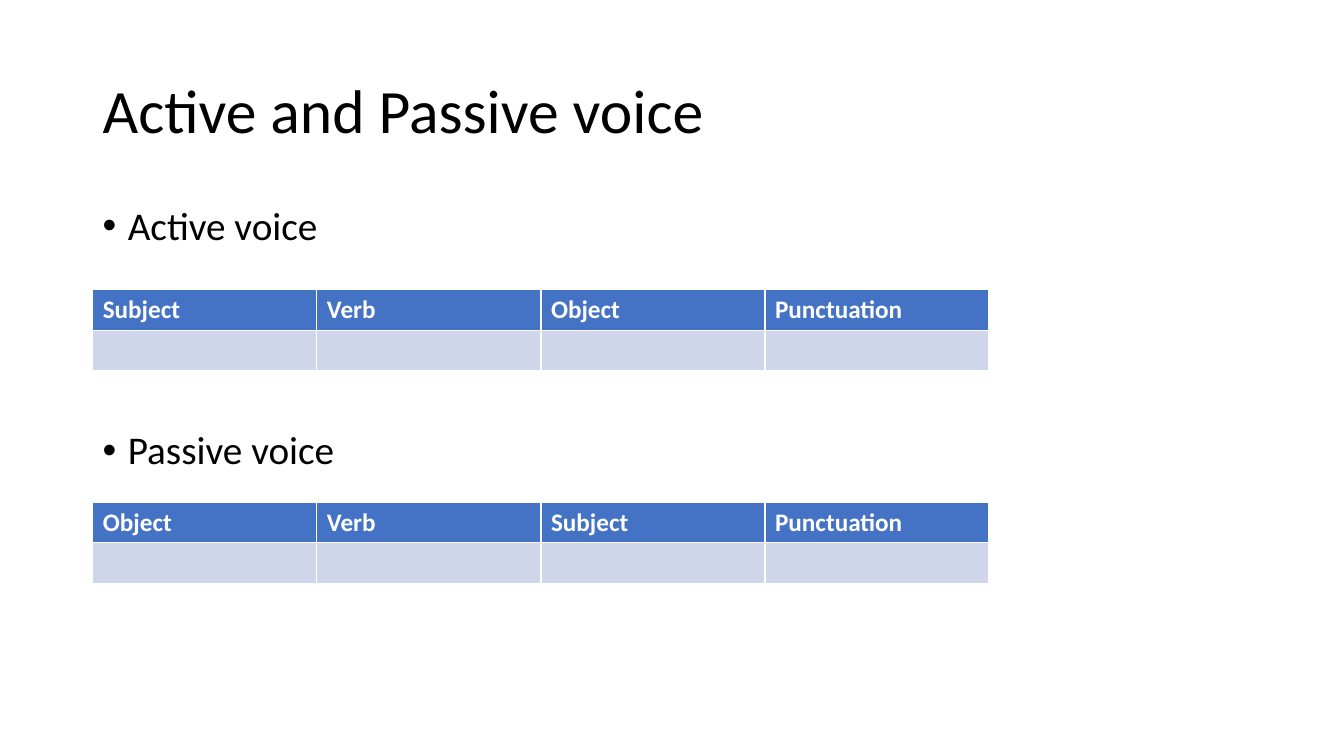
"""Build a slide on the word order of active and passive voice."""
import lxml.etree
import pptx
import pptx.dml.color
import pptx.enum.text
import pptx.oxml.ns
import pptx.util

Inches = pptx.util.Inches
Pt = pptx.util.Pt
qn = pptx.oxml.ns.qn
RGB = pptx.dml.color.RGBColor.from_string
Anchor = pptx.enum.text.MSO_ANCHOR

theme = {
    "title": {"name": "Calibri", "size": Pt(44), "color": "000000"},
    "body": {"name": "Calibri", "size": Pt(28), "color": "000000"},
    "head": {"name": "Calibri", "size": Pt(18), "color": "FFFFFF", "bold": True},
    "fills": ("4472C4", "CFD5EA"),
}


def style(font, form):
    """Set the font attributes given in a format dict."""
    for key, value in form.items():
        if key == "color":
            font.color.rgb = RGB(value)
        else:
            setattr(font, key, value)


def write(slide, top, height, anchor, lines, form):
    """Add a text box with one paragraph per line and return its paragraphs."""
    box = slide.shapes.add_textbox(Inches(0.92), Inches(top), Inches(11.5), Inches(height))
    frame = box.text_frame
    frame.word_wrap = True
    frame.vertical_anchor = anchor
    frame.text = "\n".join(lines)
    for para in frame.paragraphs:
        para.line_spacing = 0.9
        style(para.runs[0].font, form)
    return frame.paragraphs


deck = pptx.Presentation()
deck.slide_width, deck.slide_height = Inches(13.33), Inches(7.5)
slide = deck.slides.add_slide(deck.slide_layouts[6])

write(slide, 0.4, 1.45, Anchor.MIDDLE, ["Active and Passive voice"], theme["title"])

voices = write(slide, 2, 4.76, Anchor.TOP, ["Active voice", "Passive voice"], theme["body"])
voices[1].space_before = Pt(130)
for para in voices:
    props = para._p.get_or_add_pPr()
    props.set("marL", str(Inches(0.25)))
    props.set("indent", str(Inches(-0.25)))
    lxml.etree.SubElement(props, qn("a:buFont")).set("typeface", "Arial")
    lxml.etree.SubElement(props, qn("a:buChar")).set("char", "•")

orders = [
    (2.87, ["Subject", "Verb", "Object", "Punctuation"]),
    (4.98, ["Object", "Verb", "Subject", "Punctuation"]),
]
for top, heads in orders:
    frame = slide.shapes.add_table(
        2, len(heads), Inches(0.92), Inches(top), Inches(8.89), Inches(0.81))
    table = frame.table
    for col, head in enumerate(heads):
        for row, fill in enumerate(theme["fills"]):
            cell = table.cell(row, col)
            cell.fill.solid()
            cell.fill.fore_color.rgb = RGB(fill)
        title = table.cell(0, col)
        title.text = head
        style(title.text_frame.paragraphs[0].runs[0].font, theme["head"])

deck.save("out.pptx")
